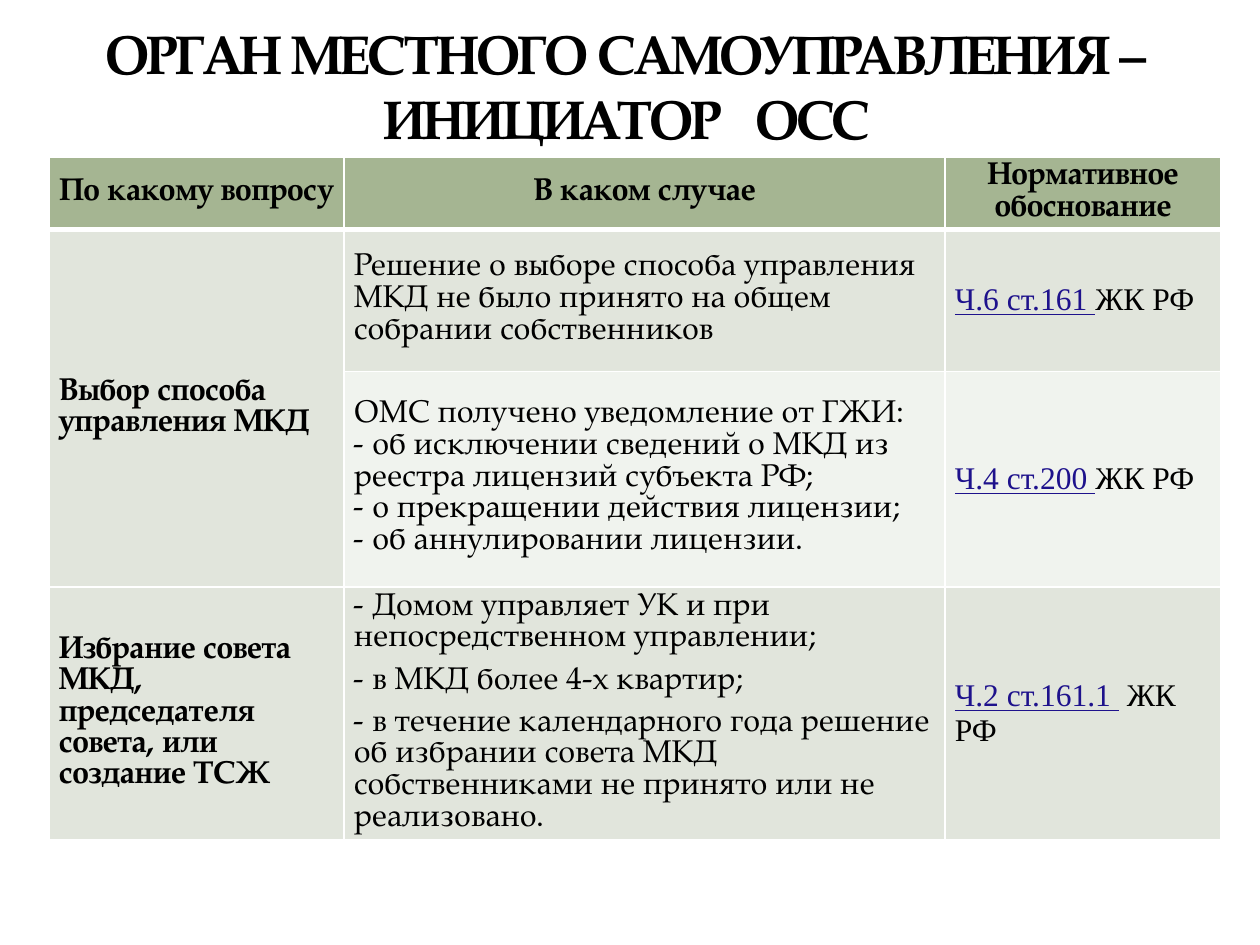
from dataclasses import dataclass

from lxml import etree
from pptx import Presentation
from pptx.dml.color import RGBColor
from pptx.enum.text import MSO_ANCHOR, PP_ALIGN
from pptx.oxml.ns import qn
from pptx.util import Emu, Pt

CENTER, LEFT = PP_ALIGN.CENTER, PP_ALIGN.LEFT
MIDDLE, BOTTOM = MSO_ANCHOR.MIDDLE, MSO_ANCHOR.BOTTOM
PX_PER_INCH = 126


@dataclass(frozen=True)
class Theme:
    """Colours, fonts and type sizes of the slide."""

    text: str = "000000"
    link: str = "1E128C"
    header: str = "A5B592"
    band_dark: str = "E1E5DC"
    band_light: str = "F0F3EE"
    border: str = "FFFFFF"
    serif: str = "TeX Gyre Pagella"
    reference: str = "Times New Roman"
    title_size: float = 31
    title_leading: float = 37.2
    body_size: float = 18
    body_leading: float = 18.1
    bold_leading: float = 17.8
    paragraph_gap: float = 6


THEME = Theme()

COLUMNS = [295, 601, 276]
ROWS = [71, 142, 216, 253]
ROW_FILLS = [THEME.header, THEME.band_dark, THEME.band_light, THEME.band_dark]

HEADINGS = ["По какому вопросу", "В каком случае", "Нормативное обоснование"]
QUESTIONS = {
    1: "Выбор способа управления МКД",
    3: "Избрание совета МКД, председателя совета, или создание ТСЖ",
}
CASES = [
    ["Решение о выборе способа управления МКД не было принято на общем собрании собственников"],
    [
        "ОМС получено уведомление от ГЖИ:",
        "- об исключении сведений о МКД из реестра лицензий субъекта РФ;",
        "- о прекращении действия лицензии;",
        "- об аннулировании лицензии.",
    ],
    [
        "- Домом управляет УК и при непосредственном управлении;",
        "- в МКД более 4-х квартир;",
        "- в течение календарного года решение об избрании совета МКД "
        "собственниками не принято или не реализовано.",
    ],
]
REFERENCES = [
    ("Ч.6 ст.161 ", "ЖК РФ"),
    ("Ч.4 ст.200 ", "ЖК РФ"),
    ("Ч.2 ст.161.1 ", " ЖК РФ"),
]


def px(length):
    """Turn whole pixels into EMU."""
    return Emu(round(length * 914400 / PX_PER_INCH))


def apply(target, values):
    """Set each attribute named in a dict of format values."""
    for name, value in values.items():
        setattr(target, name, value)


def add_span(para, text, color=THEME.text, spacing=None, **values):
    """Add a run of text with its font values."""
    span = para.add_run()
    span.text = text
    apply(span.font, {"name": THEME.serif, "size": Pt(THEME.body_size), "bold": False, **values})
    span.font.color.rgb = RGBColor.from_string(color)
    if spacing is not None:
        span.font._element.set("spc", str(spacing))


def add_title(page):
    """Add the two-line slide title."""
    box = page.shapes.add_textbox(px(59), px(0), px(1134), px(157))
    apply(box.text_frame, {"word_wrap": True, "vertical_anchor": BOTTOM})
    para = box.text_frame.paragraphs[0]
    apply(para, {"alignment": CENTER, "line_spacing": Pt(THEME.title_leading)})
    style = {"size": Pt(THEME.title_size), "bold": True}
    add_span(para, "ОРГАН МЕСТНОГО САМОУПРАВЛЕНИЯ –", spacing=-100, **style)
    para.add_line_break()
    add_span(para, "ИНИЦИАТОР", spacing=-100, **style)
    add_span(para, " ", spacing=1200, **style)
    add_span(para, "ОСС", spacing=-100, **style)


def set_borders(cell, bottom_width):
    """Draw white lines on the four sides of a cell."""
    properties = cell._tc.get_or_add_tcPr()
    widths = {"a:lnL": 1, "a:lnR": 1, "a:lnT": 1, "a:lnB": bottom_width}
    for index, (tag, width) in enumerate(widths.items()):
        line = etree.Element(qn(tag), w=str(Pt(width)))
        fill = etree.SubElement(line, qn("a:solidFill"))
        etree.SubElement(fill, qn("a:srgbClr"), val=THEME.border)
        properties.insert(index, line)


def style_cell(cell, color, bottom_width):
    """Set the fill, insets, anchor and borders of a cell."""
    apply(cell, {
        "vertical_anchor": MIDDLE,
        "margin_left": px(10), "margin_right": px(10),
        "margin_top": px(5), "margin_bottom": px(5),
    })
    cell.fill.solid()
    cell.fill.fore_color.rgb = RGBColor.from_string(color)
    set_borders(cell, bottom_width)


def write_lines(cell, lines, bold=False, alignment=LEFT, gap=THEME.paragraph_gap):
    """Write one paragraph for each line of text."""
    leading = THEME.bold_leading if bold else THEME.body_leading
    for index, text in enumerate(lines):
        para = cell.text_frame.add_paragraph() if index else cell.text_frame.paragraphs[0]
        last = index == len(lines) - 1
        apply(para, {
            "alignment": alignment,
            "line_spacing": Pt(leading),
            "space_after": Pt(THEME.paragraph_gap if last else gap),
        })
        add_span(para, text, bold=bold)


def write_reference(cell, article, code):
    """Write an underlined article followed by the name of the code."""
    para = cell.text_frame.paragraphs[0]
    para.space_after = Pt(THEME.paragraph_gap)
    add_span(para, article, THEME.link, name=THEME.reference, underline=True)
    add_span(para, code, name=THEME.reference)


def add_grounds_table(page):
    """Add the table of questions, cases and legal grounds."""
    frame = page.shapes.add_table(len(ROWS), len(COLUMNS), px(49), px(157), px(sum(COLUMNS)), px(sum(ROWS)))
    table = frame.table
    for column, width in zip(table.columns, COLUMNS):
        column.width = px(width)
    for index, (row, height, color) in enumerate(zip(table.rows, ROWS, ROW_FILLS)):
        row.height = px(height)
        for cell in row.cells:
            style_cell(cell, color, 1 if index else 3)
    table.cell(1, 0).merge(table.cell(2, 0))
    for column, heading in enumerate(HEADINGS):
        write_lines(table.cell(0, column), [heading], bold=True, alignment=CENTER)
    for row, question in QUESTIONS.items():
        write_lines(table.cell(row, 0), [question], bold=True)
    for row, (lines, reference) in enumerate(zip(CASES, REFERENCES), start=1):
        write_lines(table.cell(row, 1), lines, gap=0 if row == 2 else THEME.paragraph_gap)
        write_reference(table.cell(row, 2), *reference)


def main():
    """Build the slide and save the deck."""
    deck = Presentation()
    apply(deck, {"slide_width": px(1260), "slide_height": px(945)})
    page = deck.slides.add_slide(deck.slide_layouts[6])
    add_grounds_table(page)
    add_title(page)
    deck.save("out.pptx")


if __name__ == "__main__":
    main()
